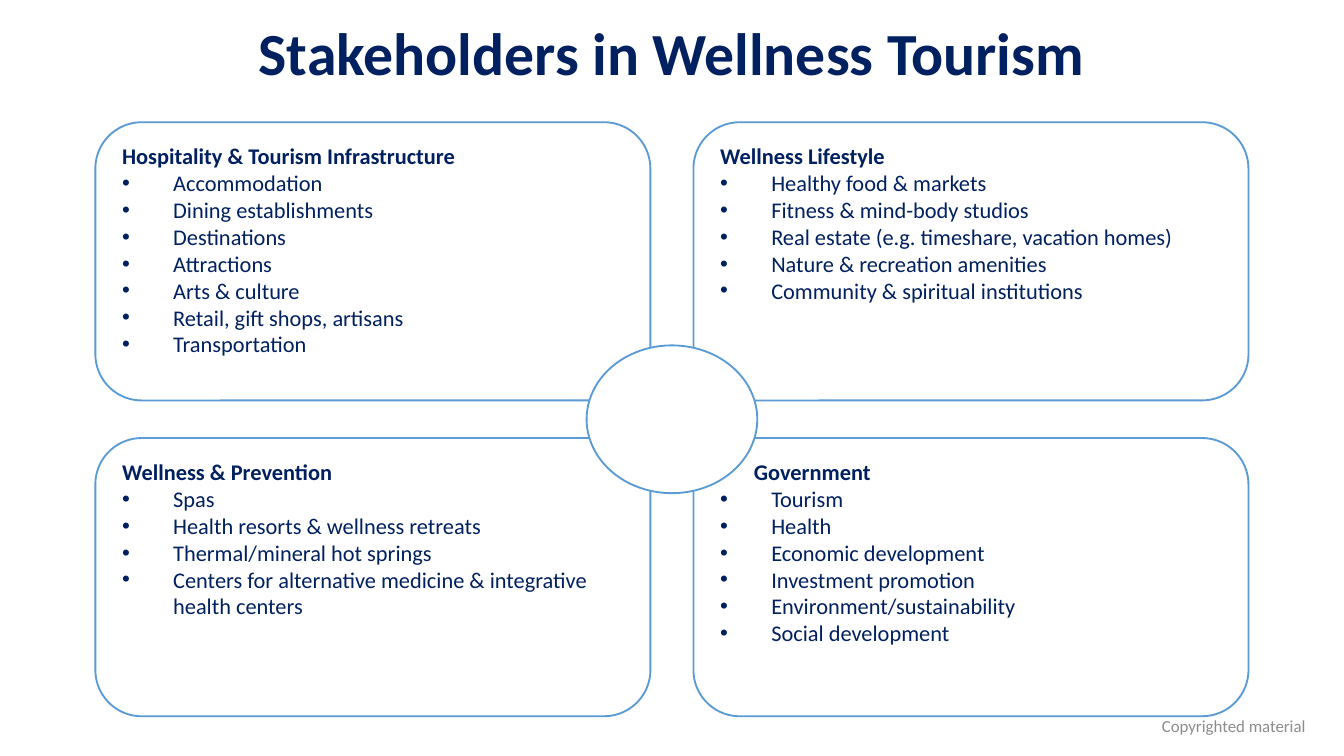
from lxml import etree
from pptx import Presentation
from pptx.dml.color import RGBColor
from pptx.enum.shapes import MSO_SHAPE
from pptx.enum.text import MSO_ANCHOR, PP_ALIGN
from pptx.oxml.ns import qn
from pptx.util import Inches, Pt

ROUNDED, OVAL = MSO_SHAPE.ROUNDED_RECTANGLE, MSO_SHAPE.OVAL
TOP, MIDDLE = MSO_ANCHOR.TOP, MSO_ANCHOR.MIDDLE
LEFT, CENTER, RIGHT = PP_ALIGN.LEFT, PP_ALIGN.CENTER, PP_ALIGN.RIGHT

COLORS = {"navy": "002060", "blue": "5B9BD5", "grey": "8C8C8C", "white": "FFFFFF"}
FONT = "Calibri"
SLIDE_W = 10
SLIDE_H = SLIDE_W * 9 / 16

# Grid of stakeholder cards, in inches
GRID_LEFT, GRID_TOP = 0.71, 0.91
CARD_W, CARD_H = 4.13, 2.07
GAP_X, GAP_Y = 0.32, 0.28
HUB_W, HUB_H = 1.27, 1.1
BULLET_INDENT = 0.38

# (column, row, heading, heading indent, items)
CARDS = [
    (0, 0, "Hospitality & Tourism Infrastructure", 0,
     ["Accommodation", "Dining establishments", "Destinations", "Attractions",
      "Arts & culture", "Retail, gift shops, artisans", "Transportation"]),
    (1, 0, "Wellness Lifestyle", 0,
     ["Healthy food & markets", "Fitness & mind-body studios",
      "Real estate (e.g. timeshare, vacation homes)",
      "Nature & recreation amenities", "Community & spiritual institutions"]),
    (0, 1, "Wellness & Prevention", 0,
     ["Spas", "Health resorts & wellness retreats", "Thermal/mineral hot springs",
      "Centers for alternative medicine & integrative health centers"]),
    (1, 1, "Government", 0.25,
     ["Tourism", "Health", "Economic development", "Investment promotion",
      "Environment/sustainability", "Social development"]),
]


def rgb(name):
    return RGBColor.from_string(COLORS[name])


def style_paragraph(p, text, size, color="navy", bold=False, align=LEFT):
    p.text = text
    p.alignment = align
    p.font.name = FONT
    p.font.size = Pt(size)
    p.font.bold = bold
    p.font.color.rgb = rgb(color)


def indent(p, margin, first_line=0):
    pPr = p._p.get_or_add_pPr()
    pPr.set("marL", str(Inches(margin)))
    pPr.set("indent", str(Inches(first_line)))
    return pPr


def add_bullet(p):
    """Give the paragraph a hanging bullet, placed before its default run style."""
    pPr = indent(p, BULLET_INDENT, -BULLET_INDENT)
    font = etree.Element(qn("a:buFont"), typeface="Arial")
    char = etree.Element(qn("a:buChar"), char="•")
    pPr.insert(0, font)
    font.addnext(char)


def add_label(s, box, text, size, color, bold, align):
    tf = s.shapes.add_textbox(*map(Inches, box)).text_frame
    tf.word_wrap = True
    tf.vertical_anchor = MIDDLE
    style_paragraph(tf.paragraphs[0], text, size, color, bold, align)
    return tf.paragraphs[0]


def add_outlined(s, kind, x, y, w, h):
    sp = s.shapes.add_shape(kind, *map(Inches, (x, y, w, h)))
    sp.shadow.inherit = False
    sp.fill.solid()
    sp.fill.fore_color.rgb = rgb("white")
    sp.line.color.rgb = rgb("blue")
    sp.line.width = Pt(1)
    return sp


def add_card(s, col, row, heading, heading_indent, items):
    x = GRID_LEFT + col * (CARD_W + GAP_X)
    y = GRID_TOP + row * (CARD_H + GAP_Y)
    tf = add_outlined(s, ROUNDED, x, y, CARD_W, CARD_H).text_frame
    tf.word_wrap = True
    tf.vertical_anchor = TOP
    p = tf.paragraphs[0]
    style_paragraph(p, heading, 12, bold=True)
    indent(p, heading_indent)
    for item in items:
        p = tf.add_paragraph()
        style_paragraph(p, item, 12)
        add_bullet(p)


def add_hub(s):
    """Put the ellipse where the four cards meet."""
    center_x = GRID_LEFT + CARD_W + GAP_X / 2
    center_y = GRID_TOP + CARD_H + GAP_Y / 2
    add_outlined(s, OVAL, center_x - HUB_W / 2, center_y - HUB_H / 2, HUB_W, HUB_H)


def main():
    prs = Presentation()
    prs.slide_width, prs.slide_height = Inches(SLIDE_W), Inches(SLIDE_H)
    s = prs.slides.add_slide(prs.slide_layouts[6])
    title = add_label(s, (0.69, 0.06, 8.62, 0.72), "Stakeholders in Wellness Tourism",
                      32, "navy", True, CENTER)
    title.line_spacing = 0.9
    add_label(s, (8.11, 5.25, 1.73, 0.3), "Copyrighted material ",
              9, "grey", False, RIGHT)
    for card in CARDS:
        add_card(s, *card)
    add_hub(s)
    prs.save("out.pptx")


if __name__ == "__main__":
    main()
